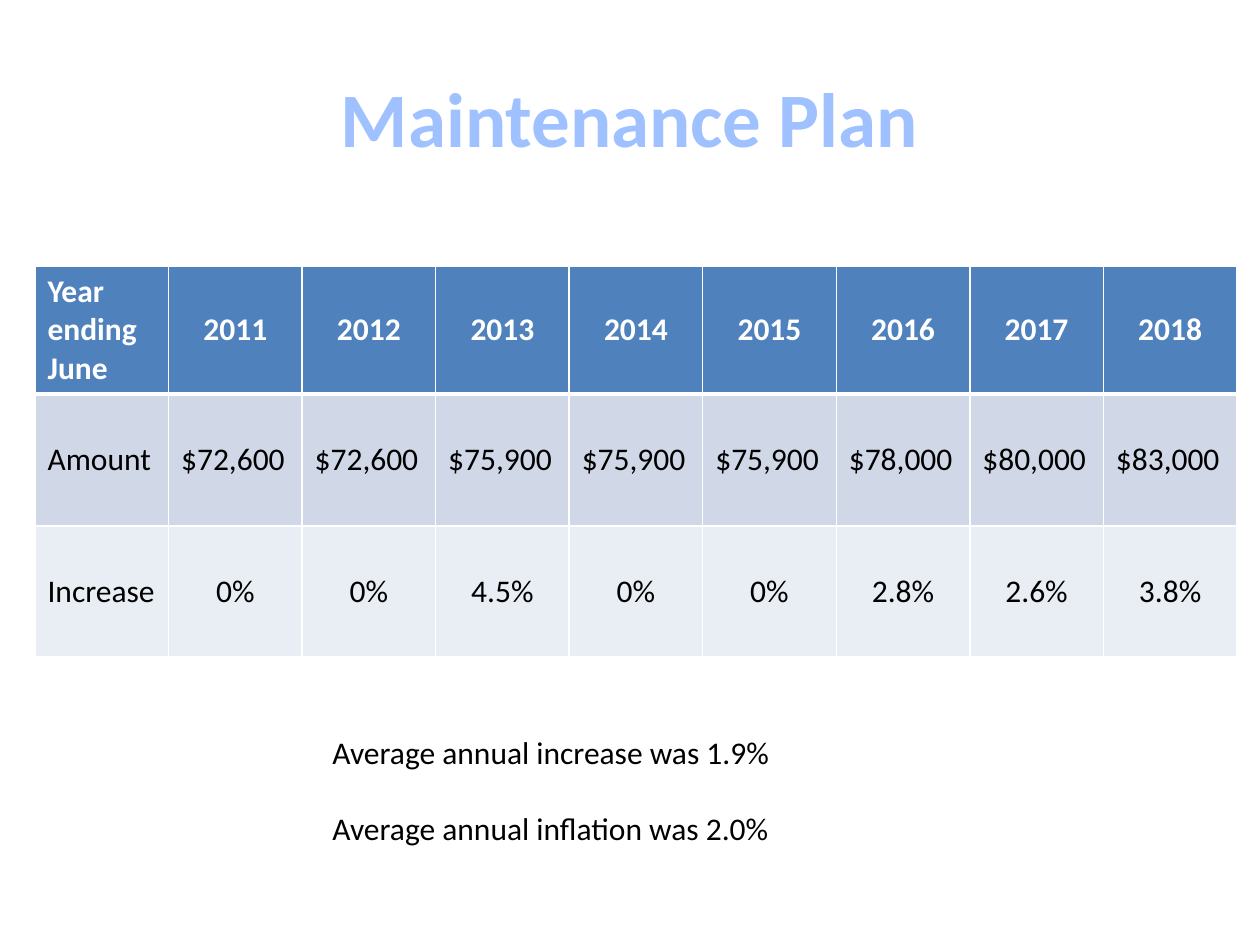
"""Build the Maintenance Plan slide with its table of yearly amounts."""
import dataclasses
import typing

import lxml.etree
import pptx
import pptx.dml.color
import pptx.enum.text
import pptx.oxml.ns
import pptx.util

PIXELS_PER_INCH = 126
FONT = "Calibri"
BLACK, WHITE = "000000", "FFFFFF"
LEFT = pptx.enum.text.PP_ALIGN.LEFT
CENTER = pptx.enum.text.PP_ALIGN.CENTER
MIDDLE = pptx.enum.text.MSO_ANCHOR.MIDDLE


@dataclasses.dataclass(frozen=True)
class PlanRow:
    label: str
    values: tuple[str, ...]
    height: int
    fill: str
    color: str = BLACK
    bold: bool = False
    alignment: typing.Any = CENTER
    bottom_border: int = 1


PLAN_ROWS = (
    PlanRow("Year ending June", tuple(str(year) for year in range(2011, 2019)),
            127, "4F81BD", WHITE, bold=True, bottom_border=3),
    PlanRow("Amount", ("$72,600", "$72,600", "$75,900", "$75,900", "$75,900",
                       "$78,000", "$80,000", "$83,000"),
            132, "D0D8E8", alignment=LEFT),
    PlanRow("Increase", ("0%", "0%", "4.5%", "0%", "0%", "2.8%", "2.6%", "3.8%"),
            131, "E9EDF4"),
)


def px(length: int) -> pptx.util.Emu:
    return pptx.util.Emu(round(length * 914400 / PIXELS_PER_INCH))


def rgb(color: str) -> pptx.dml.color.RGBColor:
    return pptx.dml.color.RGBColor.from_string(color)


def write(frame, text: str, *, size: int = 18, color: str = BLACK,
          bold: bool = False, alignment=LEFT, gap: int = 0) -> None:
    frame.word_wrap = True
    frame.text = text
    for index, paragraph in enumerate(frame.paragraphs):
        paragraph.alignment = alignment
        paragraph.space_before = pptx.util.Pt(gap if index else 0)
        font = paragraph.runs[0].font
        font.name, font.size, font.bold = FONT, pptx.util.Pt(size), bold
        font.color.rgb = rgb(color)


def add_border(cell, side: str, points: int) -> None:
    properties = cell._tc.get_or_add_tcPr()
    line = lxml.etree.SubElement(properties, pptx.oxml.ns.qn(f"a:ln{side}"),
                                 w=str(pptx.util.Pt(points)))
    fill = lxml.etree.SubElement(line, pptx.oxml.ns.qn("a:solidFill"))
    lxml.etree.SubElement(fill, pptx.oxml.ns.qn("a:srgbClr"), val=WHITE)


def add_title(slide) -> None:
    title = slide.shapes.title
    title.left, title.top = px(63), px(38)
    title.width, title.height = px(1134), px(158)
    title.text_frame.vertical_anchor = MIDDLE
    write(title.text_frame, "Maintenance Plan", size=44, color="A0C1FF",
          bold=True, alignment=CENTER)


def add_plan_table(slide, rows: tuple[PlanRow, ...]) -> None:
    column_count = 1 + len(rows[0].values)
    height = sum(row.height for row in rows)
    table = slide.shapes.add_table(len(rows), column_count, px(35), px(266),
                                   px(1202), px(height)).table
    top_border = 1
    for row_index, row in enumerate(rows):
        table.rows[row_index].height = px(row.height)
        for column_index, text in enumerate((row.label, *row.values)):
            cell = table.cell(row_index, column_index)
            cell.vertical_anchor = MIDDLE
            borders = {"L": 1, "R": 1, "T": top_border, "B": row.bottom_border}
            for side, points in borders.items():
                add_border(cell, side, points)
            cell.fill.solid()
            cell.fill.fore_color.rgb = rgb(row.fill)
            write(cell.text_frame, text, color=row.color, bold=row.bold,
                  alignment=row.alignment if column_index else LEFT)
        top_border = row.bottom_border


def add_averages(slide) -> None:
    box = slide.shapes.add_textbox(px(320), px(727), px(562), px(127))
    write(box.text_frame, "Average annual increase was 1.9%\n"
          "Average annual inflation was 2.0%", gap=22)


def main() -> None:
    presentation = pptx.Presentation()
    presentation.slide_width, presentation.slide_height = px(1260), px(945)
    slide = presentation.slides.add_slide(
        presentation.slide_layouts.get_by_name("Title Only"))
    add_title(slide)
    add_plan_table(slide, PLAN_ROWS)
    add_averages(slide)
    presentation.save("out.pptx")


if __name__ == "__main__":
    main()
